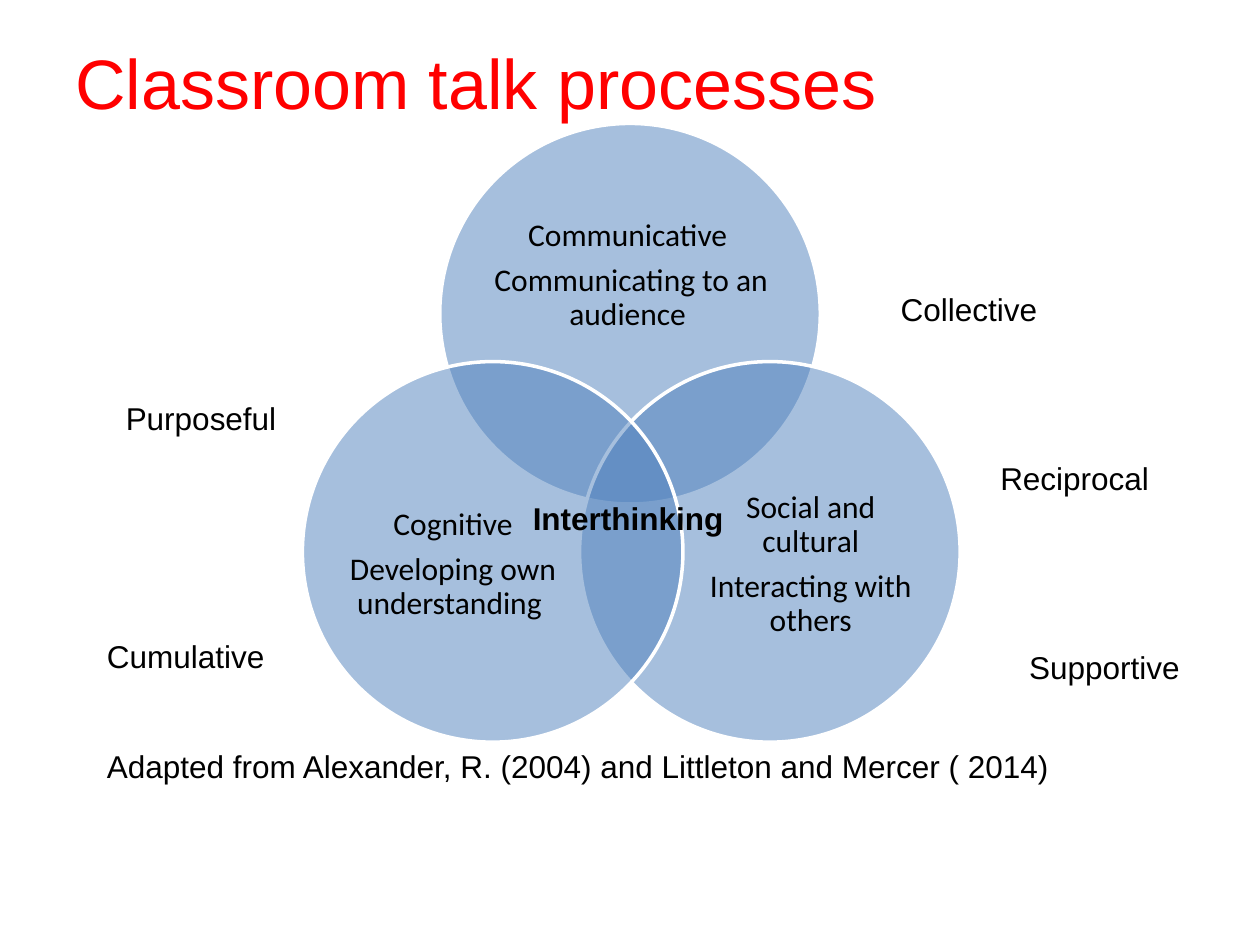
from lxml import etree
from pptx import Presentation
from pptx.dml.color import RGBColor
from pptx.enum.shapes import MSO_SHAPE
from pptx.enum.text import MSO_ANCHOR, PP_ALIGN
from pptx.oxml.ns import qn
from pptx.util import Inches, Pt

TITLE = "Classroom talk processes"
DIAMETER = 3.02
# circle left, top; text left, top, width, height; paragraphs
CIRCLES = [
    ((3.49, 0.98), (3.9, 1.51, 2.22, 1.36),
     ["Communicative ", "Communicating to an audience "]),
    ((4.6, 2.87), (5.53, 3.65, 1.81, 1.66),
     ["Social and cultural", "Interacting with others"]),
    ((2.4, 2.87), (2.69, 3.65, 1.81, 1.66),
     ["Cognitive", "Developing own understanding "]),
]
CENTRE = ("Interthinking", 4.13, 3.91, 1.75)
# text, left, top, width
LABELS = [
    ("Collective", 7.05, 2.25, 1.34),
    ("Reciprocal", 7.84, 3.59, 1.42),
    ("Supportive", 8.07, 5.09, 1.5),
    ("Cumulative", 0.75, 5.01, 1.57),
    ("Purposeful", 0.9, 3.12, 1.73),
    ("Adapted from Alexander, R. (2004) and Littleton and Mercer ( 2014)",
     0.75, 5.88, 8.11),
]
LABEL_HEIGHT = 0.4


def rgb(value):
    return RGBColor.from_string(value)


def add_text(slide, paragraphs, box, size=18, font="Arial", color="000000",
             bold=False, align=PP_ALIGN.LEFT, anchor=MSO_ANCHOR.TOP,
             inset=None, line_spacing=None, space_after=0):
    tf = slide.shapes.add_textbox(*map(Inches, box)).text_frame
    tf.word_wrap = True
    tf.vertical_anchor = anchor
    if inset is not None:
        tf.margin_left = tf.margin_right = Inches(inset)
        tf.margin_top = tf.margin_bottom = Inches(inset)
    for i, text in enumerate(paragraphs):
        p = tf.add_paragraph() if i else tf.paragraphs[0]
        p.alignment = align
        p.line_spacing = line_spacing
        p.space_after = Pt(space_after)
        r = p.add_run()
        r.text = text
        r.font.name, r.font.size, r.font.bold = font, Pt(size), bold
        r.font.color.rgb = rgb(color)


def add_circle(slide, left, top):
    """Add a half-transparent circle with a white outline."""
    sp = slide.shapes.add_shape(
        MSO_SHAPE.OVAL, *map(Inches, (left, top, DIAMETER, DIAMETER)))
    sp.shadow.inherit = False
    sp.fill.solid()
    sp.fill.fore_color.rgb = rgb("4F81BD")
    fill_color = sp._element.spPr.find(qn("a:solidFill"))[0]
    etree.SubElement(fill_color, qn("a:alpha"), val="50000")
    sp.line.color.rgb = rgb("FFFFFF")
    sp.line.width = Pt(2)


def main():
    prs = Presentation()
    prs.slide_width, prs.slide_height = Inches(10), Inches(7.5)
    slide = prs.slides.add_slide(prs.slide_layouts[6])

    add_text(slide, [TITLE], (0.5, 0.3, 9, 0.69), size=40, color="FF0000",
             anchor=MSO_ANCHOR.MIDDLE)
    for position, box, paragraphs in CIRCLES:
        add_circle(slide, *position)
        add_text(slide, paragraphs, box, font="Calibri",
                 align=PP_ALIGN.CENTER, anchor=MSO_ANCHOR.MIDDLE,
                 inset=0, line_spacing=0.9, space_after=6.3)
    for label in [CENTRE] + LABELS:
        text, *box = label
        add_text(slide, [text], (*box, LABEL_HEIGHT), bold=label is CENTRE)

    prs.save("out.pptx")


if __name__ == "__main__":
    main()
